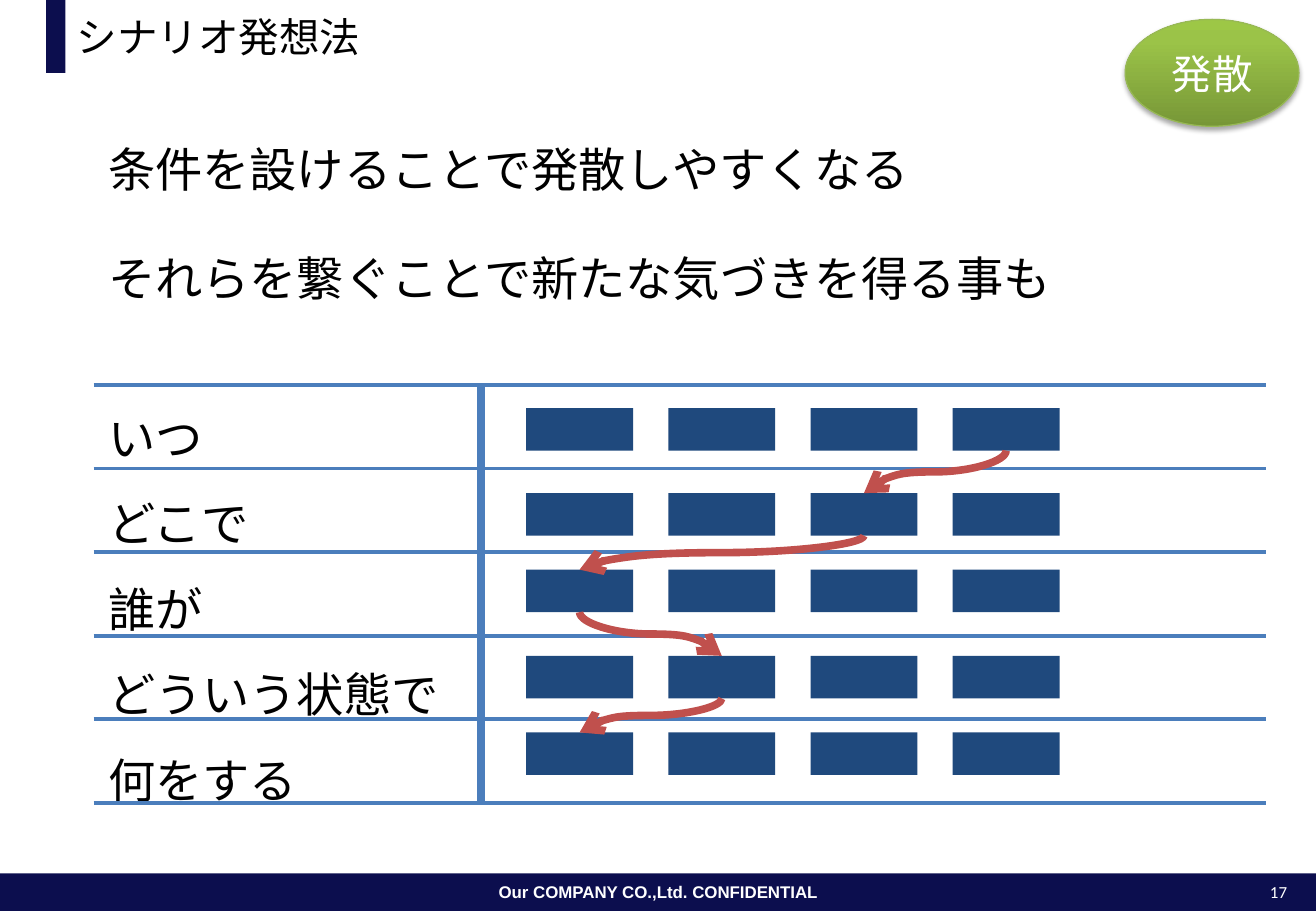
from copy import deepcopy

from pptx import Presentation
from pptx.dml.color import RGBColor
from pptx.enum.shapes import MSO_CONNECTOR, MSO_SHAPE
from pptx.enum.text import MSO_ANCHOR, PP_ALIGN
from pptx.oxml import parse_xml
from pptx.oxml.ns import nsdecls, qn
from pptx.oxml.xmlchemy import OxmlElement
from pptx.util import Inches, Pt

COLORS = {
    "navy": "0C0E4E",
    "white": "FFFFFF",
    "black": "000000",
    "rule": "4B7EBC",
    "card": "1F497D",
    "arrow": "C0504D",
    "badge_line": "98B955",
}
BADGE_STOPS = [(0, "779737"), (0.8, "9BC348"), (1, "9DC746")]
JAPANESE_FONT = "Noto Sans CJK JP"
LABELS = ["いつ", "どこで", "誰が", "どういう状態で", "何をする"]
CARD_TOPS = [3.36, 4.06, 4.69, 5.4, 6.03]
CARD_COLUMNS = 4
CARD_PITCH = 1.17
CARD_WIDTH, CARD_HEIGHT = 0.88, 0.35
STORY_COLUMNS = [3, 2, 0, 1, 0]


def color(name):
    return RGBColor.from_string(COLORS[name])


def write(para, text, size, ink, font=JAPANESE_FONT, bold=False):
    span = para.add_run()
    span.text = text
    span.font.size = Pt(size)
    span.font.bold = bold
    span.font.name = font
    span.font.color.rgb = color(ink)
    east_asian = OxmlElement("a:ea")
    east_asian.set("typeface", font)
    span.font._element.find(qn("a:latin")).addnext(east_asian)


def add_block(page, box, fill):
    block = page.shapes.add_shape(MSO_SHAPE.RECTANGLE, *map(Inches, box))
    block.shadow.inherit = False
    block.fill.solid()
    block.fill.fore_color.rgb = color(fill)
    block.line.fill.background()
    return block


def add_line(page, kind, start, end, ink, width):
    line = page.shapes.add_connector(kind, *map(Inches, (*start, *end)))
    line.line.color.rgb = color(ink)
    line.line.width = Pt(width)
    line._element.spPr.append(OxmlElement("a:effectLst"))
    return line


def add_text(page, box, texts, spacing):
    frame = page.shapes.add_textbox(*map(Inches, box)).text_frame
    frame.word_wrap = True
    frame.margin_left = frame.margin_right = Inches(0.12)
    frame.margin_top = frame.margin_bottom = Inches(0.08)
    for index, text in enumerate(texts):
        para = frame.paragraphs[0] if index == 0 else frame.add_paragraph()
        para.line_spacing = Pt(spacing)
        write(para, text, 28, "black")


def add_footer(page, box):
    left, top, width, height = box
    frame = add_block(page, box, "navy").text_frame
    frame.word_wrap = False
    frame.vertical_anchor = MSO_ANCHOR.MIDDLE
    para = frame.paragraphs[0]
    para.alignment = PP_ALIGN.CENTER
    write(para, "Our COMPANY CO.,Ltd. CONFIDENTIAL", 10, "white", "Arial", True)
    number_box = (left + width - 0.55, top + 0.02, 0.41, 0.27)
    frame = page.shapes.add_textbox(*map(Inches, number_box)).text_frame
    para = frame.paragraphs[0]
    para.alignment = PP_ALIGN.RIGHT
    write(para, "17", 10, "white", "Calibri")


def add_heading(page, box):
    left, top, width, height = box
    add_block(page, (left, top, 0.16, height), "navy")
    title = page.shapes.title
    title.left, title.top = Inches(left + 0.15), Inches(top)
    title.width, title.height = Inches(width - 0.15), Inches(height)
    title.text_frame.vertical_anchor = MSO_ANCHOR.MIDDLE
    para = title.text_frame.paragraphs[0]
    para.alignment = PP_ALIGN.LEFT
    write(para, "シナリオ発想法", 24, "black")


def add_badge(page, box):
    badge = page.shapes.add_shape(MSO_SHAPE.OVAL, *map(Inches, box))
    badge.fill.gradient()
    badge.fill.gradient_angle = 90
    stop_list = badge._element.spPr.find(qn("a:gradFill")).find(qn("a:gsLst"))
    stop_list.append(deepcopy(stop_list[-1]))
    for stop, (position, shade) in zip(badge.fill.gradient_stops, BADGE_STOPS):
        stop.position = position
        stop.color.rgb = RGBColor.from_string(shade)
    badge.line.color.rgb = color("badge_line")
    badge.line.width = Pt(0.75)
    badge._element.spPr.append(parse_xml(
        f'<a:effectLst {nsdecls("a")}>'
        f'<a:outerShdw blurRad="{Pt(3.1)}" dist="{Pt(1.8)}" dir="5400000" rotWithShape="0">'
        f'<a:srgbClr val="{COLORS["black"]}"><a:alpha val="35000"/></a:srgbClr>'
        '</a:outerShdw></a:effectLst>'))
    badge.text_frame.vertical_anchor = MSO_ANCHOR.MIDDLE
    para = badge.text_frame.paragraphs[0]
    para.alignment = PP_ALIGN.CENTER
    write(para, "発散", 24, "white")


def add_story_arrow(page, start, end):
    run, drop = end[0] - start[0], end[1] - start[1]
    middle_x, middle_y = (start[0] + end[0]) / 2, (start[1] + end[1]) / 2
    rightward = run > 0
    near, far = middle_x - drop / 2, middle_x + drop / 2
    if rightward:
        near, far = far, near
    arrow = add_line(page, MSO_CONNECTOR.CURVE,
                     (near, middle_y - abs(run) / 2),
                     (far, middle_y + abs(run) / 2), "arrow", 4.5)
    frame = arrow._element.spPr.find(qn("a:xfrm"))
    frame.set("rot", "16200000" if rightward else "5400000")
    tip = OxmlElement("a:tailEnd")
    tip.set("type", "arrow")
    arrow.line._get_or_add_ln().append(tip)


def add_scenario_grid(page, box):
    left, top, width, height = box
    add_text(page, (left, top - 0.12, 3.56, 3.69), LABELS, 50.7)
    for index in range(len(LABELS) + 1):
        level = top + index * height / len(LABELS)
        add_line(page, MSO_CONNECTOR.STRAIGHT, (left, level), (left + width, level), "rule", 2.25)
    divider = left + 3.19
    add_line(page, MSO_CONNECTOR.STRAIGHT, (divider, top), (divider, top + height), "rule", 4.5)
    first_card = divider + 0.37
    for card_top in CARD_TOPS:
        for column in range(CARD_COLUMNS):
            card_left = first_card + column * CARD_PITCH
            add_block(page, (card_left, card_top, CARD_WIDTH, CARD_HEIGHT), "card")
    stops = [(first_card + column * CARD_PITCH + CARD_WIDTH / 2, card_top)
             for column, card_top in zip(STORY_COLUMNS, CARD_TOPS)]
    for (start_x, start_top), end in zip(stops, stops[1:]):
        add_story_arrow(page, (start_x, start_top + CARD_HEIGHT), end)


def main():
    deck = Presentation()
    deck.slide_width, deck.slide_height = Inches(10.83), Inches(7.5)
    page = deck.slides.add_slide(deck.slide_layouts[5])
    add_footer(page, (0, 7.19, 10.83, 0.31))
    add_heading(page, (0.38, 0, 10.31, 0.6))
    add_text(page, (0.77, 0.99, 8.35, 0.62), ["条件を設けることで発散しやすくなる"], 40)
    add_badge(page, (9.26, 0.16, 1.43, 0.88))
    add_text(page, (0.77, 1.88, 9.65, 0.68), ["それらを繋ぐことで新たな気づきを得る事も"], 40)
    add_scenario_grid(page, (0.77, 3.17, 9.65, 3.44))
    deck.save("out.pptx")


if __name__ == "__main__":
    main()
